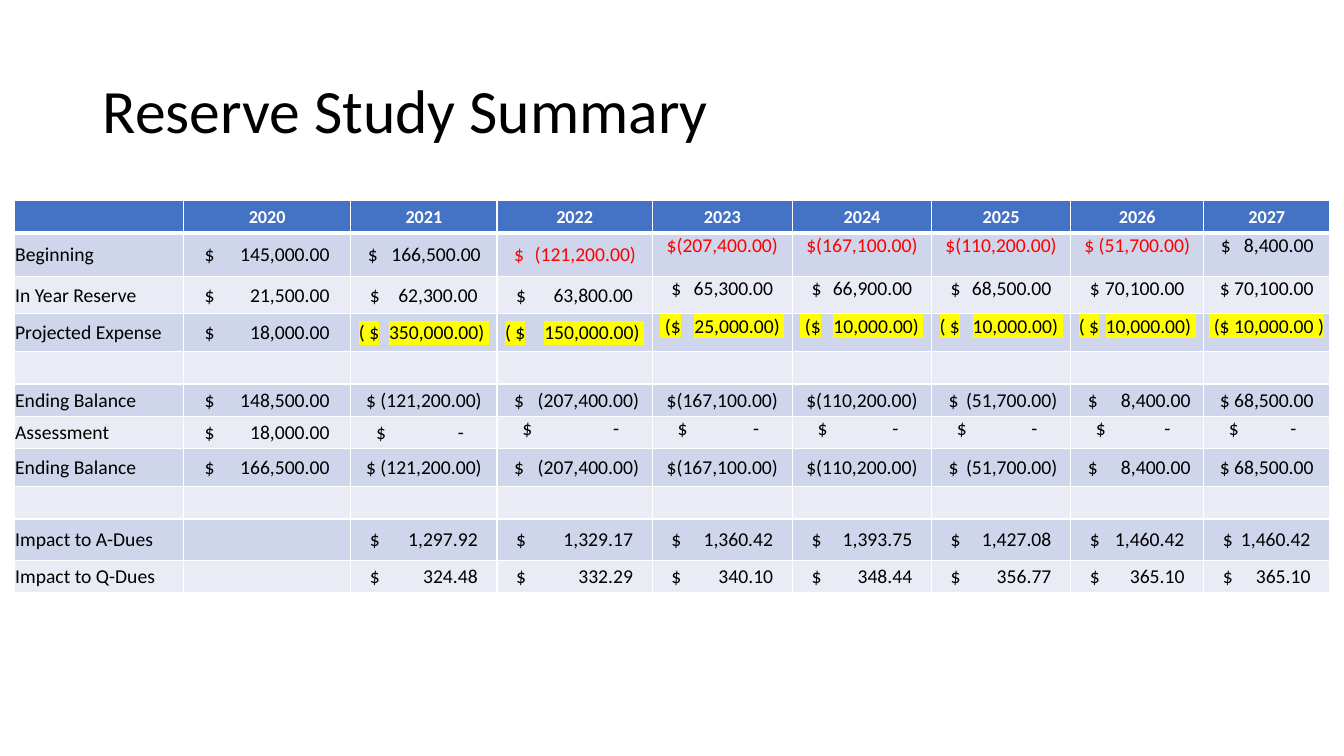
from lxml import etree
from pptx import Presentation
from pptx.dml.color import RGBColor
from pptx.enum import text
from pptx.oxml import ns
from pptx.util import Inches, Pt

FONT = "Calibri"
BLACK, WHITE, RED, YELLOW = "000000", "FFFFFF", "FF0000", "FFFF00"
HEADER_BLUE, BANDS = "4472C4", ("E9EBF5", "CFD5EA")
YEARS = range(2020, 2028)
COLUMN_WIDTHS = (1.68, 1.66, 1.45, 1.54, 1.39, 1.38, 1.38, 1.32, 1.25)
HEADER_HEIGHT = 0.32
INSET = 0.01
FIRST_YEAR_PADS = (0.21, 0.21)

ENDING = ["$ (121,200.00)", "$\t(207,400.00)", "$(167,100.00)", "$(110,200.00)",
          "$\t(51,700.00)", "$\t8,400.00", "$ 68,500.00"]

# label, height, first top-anchored column, (left pad, right pad), amounts
ROWS = [
    ("Beginning", 0.43, 4, (0.17, 0.16),
     ["$\t145,000.00", "$\t166,500.00", "$\t(121,200.00)", "$(207,400.00)",
      "$(167,100.00)", "$(110,200.00)", "$ (51,700.00)", "$\t8,400.00"]),
    ("In Year Reserve", 0.37, 4, (0.19, 0.19),
     ["$\t21,500.00", "$\t62,300.00", "$\t63,800.00", "$\t65,300.00",
      "$\t66,900.00", "$\t68,500.00", "$\t70,100.00", "$ 70,100.00"]),
    ("Projected Expense", 0.38, 4, (0.08, 0.08),
     ["$\t18,000.00", "( $\t350,000.00) ", "( $\t150,000.00) ", " ($\t25,000.00) ",
      " ($\t10,000.00) ", "( $\t10,000.00) ", "( $\t10,000.00) ", " ($ 10,000.00 )"]),
    ("", 0.32, 9, (0, 0), [""] * 8),
    ("Ending Balance", 0.32, 9, (0.17, 0.13), ["$\t148,500.00"] + ENDING),
    ("Assessment", 0.32, 3, (0.25, 0.33), ["$\t18,000.00"] + ["$\t-"] * 7),
    ("Ending Balance", 0.38, 9, (0.17, 0.13), ["$\t166,500.00"] + ENDING),
    ("", 0.32, 9, (0, 0), [""] * 8),
    ("Impact to A-Dues", 0.41, 9, (0.19, 0.19),
     ["", "$\t1,297.92", "$\t1,329.17", "$\t1,360.42", "$\t1,393.75",
      "$\t1,427.08", "$\t1,460.42", "$\t1,460.42"]),
    ("Impact to Q-Dues", 0.32, 9, (0.19, 0.19),
     ["", "$\t324.48", "$\t332.29", "$\t340.10", "$\t348.44",
      "$\t356.77", "$\t365.10", "$\t365.10"]),
]


def rgb(value):
    return RGBColor.from_string(value)


def add_child(parent, tag, **attributes):
    return etree.SubElement(parent, ns.qn(tag), attributes)


def write(paragraph, wording, size, color, bold=False, highlight=None):
    run = paragraph.add_run()
    run.text = wording
    run.font.size = Pt(size)
    run.font.bold = bold
    run.font.color.rgb = rgb(color)
    if highlight:
        marker = etree.Element(ns.qn("a:highlight"))
        add_child(marker, "a:srgbClr", val=highlight)
        run.font.fill._xPr.find(ns.qn("a:solidFill")).addnext(marker)
    run.font.name = FONT


def add_title(slide, wording):
    title = slide.shapes.add_textbox(Inches(0.92), Inches(0.4), Inches(11.5), Inches(1.45))
    frame = title.text_frame
    frame.word_wrap = True
    frame.vertical_anchor = text.MSO_ANCHOR.MIDDLE
    frame.paragraphs[0].line_spacing = 0.9
    write(frame.paragraphs[0], wording, 44, BLACK)


def style_cell(cell, fill, top=1, bottom=1):
    properties = cell._tc.get_or_add_tcPr()
    for side, points in (("L", 1), ("R", 1), ("T", top), ("B", bottom)):
        border = add_child(properties, f"a:ln{side}", w=str(Pt(points)))
        add_child(add_child(border, "a:solidFill"), "a:srgbClr", val=WHITE)
    cell.fill.solid()
    cell.fill.fore_color.rgb = rgb(fill)
    cell.margin_left = cell.margin_right = cell.margin_top = Inches(INSET)
    cell.margin_bottom = 0
    cell.vertical_anchor = text.MSO_ANCHOR.MIDDLE


def write_amount(cell, amount, width, pads, color, highlight):
    paragraph = cell.text_frame.paragraphs[0]
    if "\t" in amount:
        left, right = pads
        cell.margin_left = Inches(left)
        paragraph.alignment = text.PP_ALIGN.LEFT
        stops = add_child(paragraph._p.get_or_add_pPr(), "a:tabLst")
        add_child(stops, "a:tab", pos=str(Inches(width - left - right)), algn="r")
    else:
        paragraph.alignment = text.PP_ALIGN.CENTER
    write(paragraph, amount, 14, color, highlight=highlight)


def fill_header(table):
    for column, heading in enumerate(["", *map(str, YEARS)]):
        cell = table.cell(0, column)
        style_cell(cell, HEADER_BLUE, bottom=3)
        if heading:
            paragraph = cell.text_frame.paragraphs[0]
            paragraph.alignment = text.PP_ALIGN.CENTER
            write(paragraph, heading, 13, WHITE, bold=True)


def fill_row(table, row, label, first_top, pads, amounts):
    for column, wording in enumerate([label, *amounts]):
        cell = table.cell(row, column)
        style_cell(cell, BANDS[row % 2], top=3 if row == 1 else 1)
        if column >= first_top:
            cell.vertical_anchor = text.MSO_ANCHOR.TOP
        if not wording:
            continue
        if column == 0:
            write(cell.text_frame.paragraphs[0], wording, 14, BLACK)
            continue
        negative = "(" in wording
        color = RED if label == "Beginning" and negative else BLACK
        highlight = YELLOW if label == "Projected Expense" and negative else None
        write_amount(cell, wording, COLUMN_WIDTHS[column],
                     FIRST_YEAR_PADS if column == 1 else pads, color, highlight)


def add_reserve_table(slide):
    heights = [HEADER_HEIGHT, *(row[1] for row in ROWS)]
    table = slide.shapes.add_table(
        len(heights), len(COLUMN_WIDTHS), Inches(0.14), Inches(1.99),
        Inches(sum(COLUMN_WIDTHS)), Inches(sum(heights))).table
    for column, width in zip(table.columns, COLUMN_WIDTHS):
        column.width = Inches(width)
    for row, height in zip(table.rows, heights):
        row.height = Inches(height)
    fill_header(table)
    for row, (label, _, first_top, pads, amounts) in enumerate(ROWS, 1):
        fill_row(table, row, label, first_top, pads, amounts)


def main():
    deck = Presentation()
    deck.slide_width, deck.slide_height = Inches(13.33), Inches(7.5)
    slide = deck.slides.add_slide(deck.slide_layouts[6])
    add_reserve_table(slide)
    add_title(slide, "Reserve Study Summary")
    deck.save("out.pptx")


if __name__ == "__main__":
    main()
